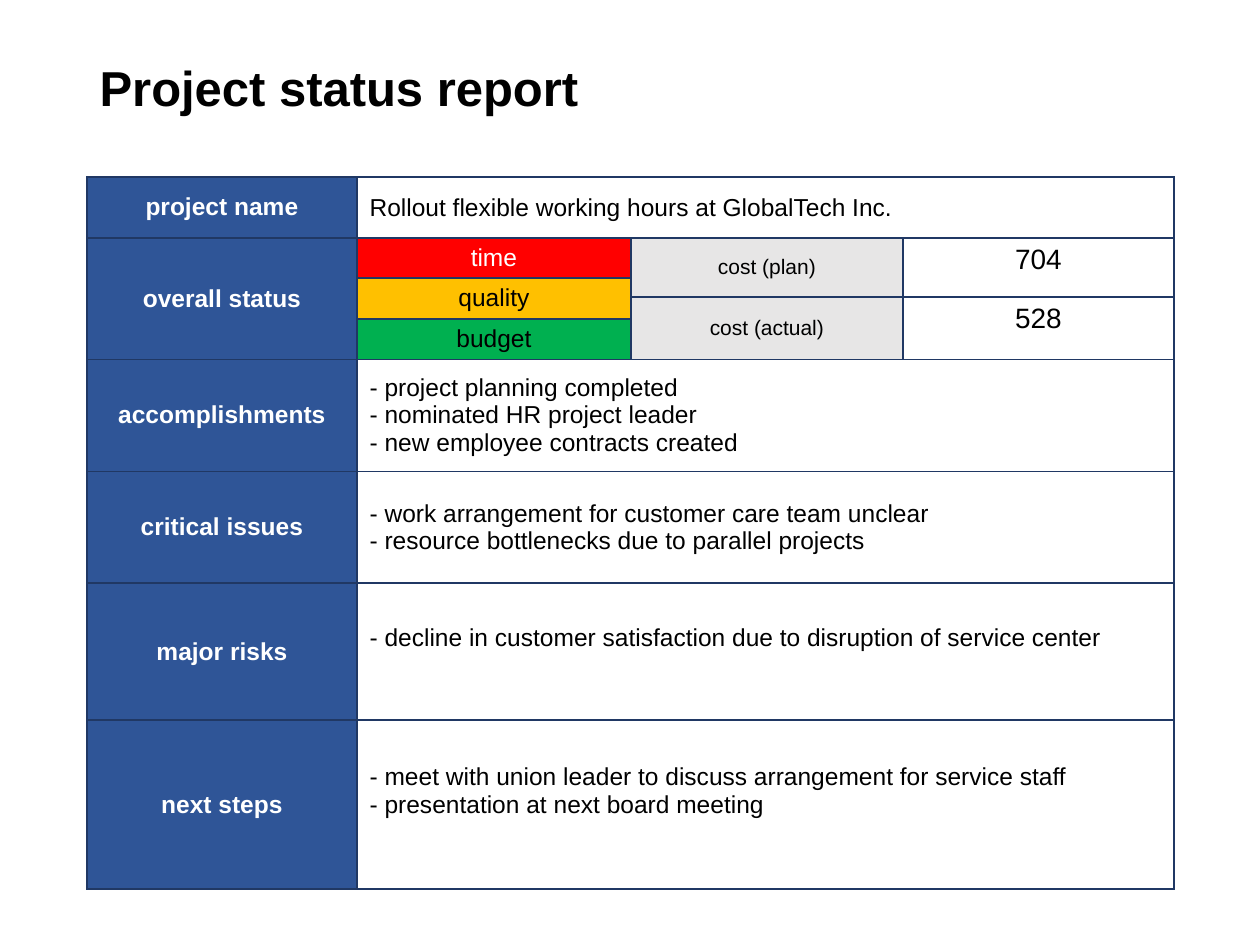
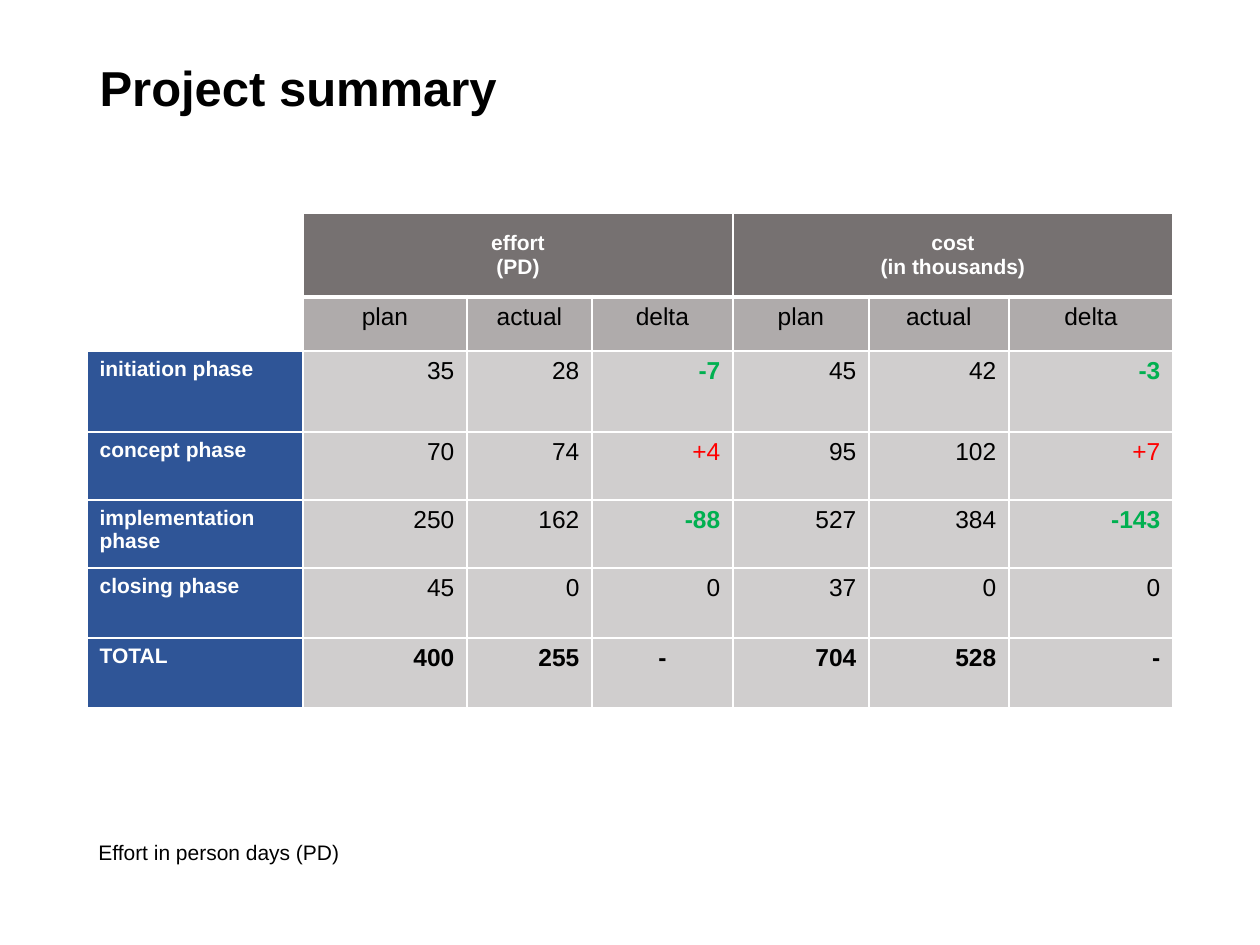
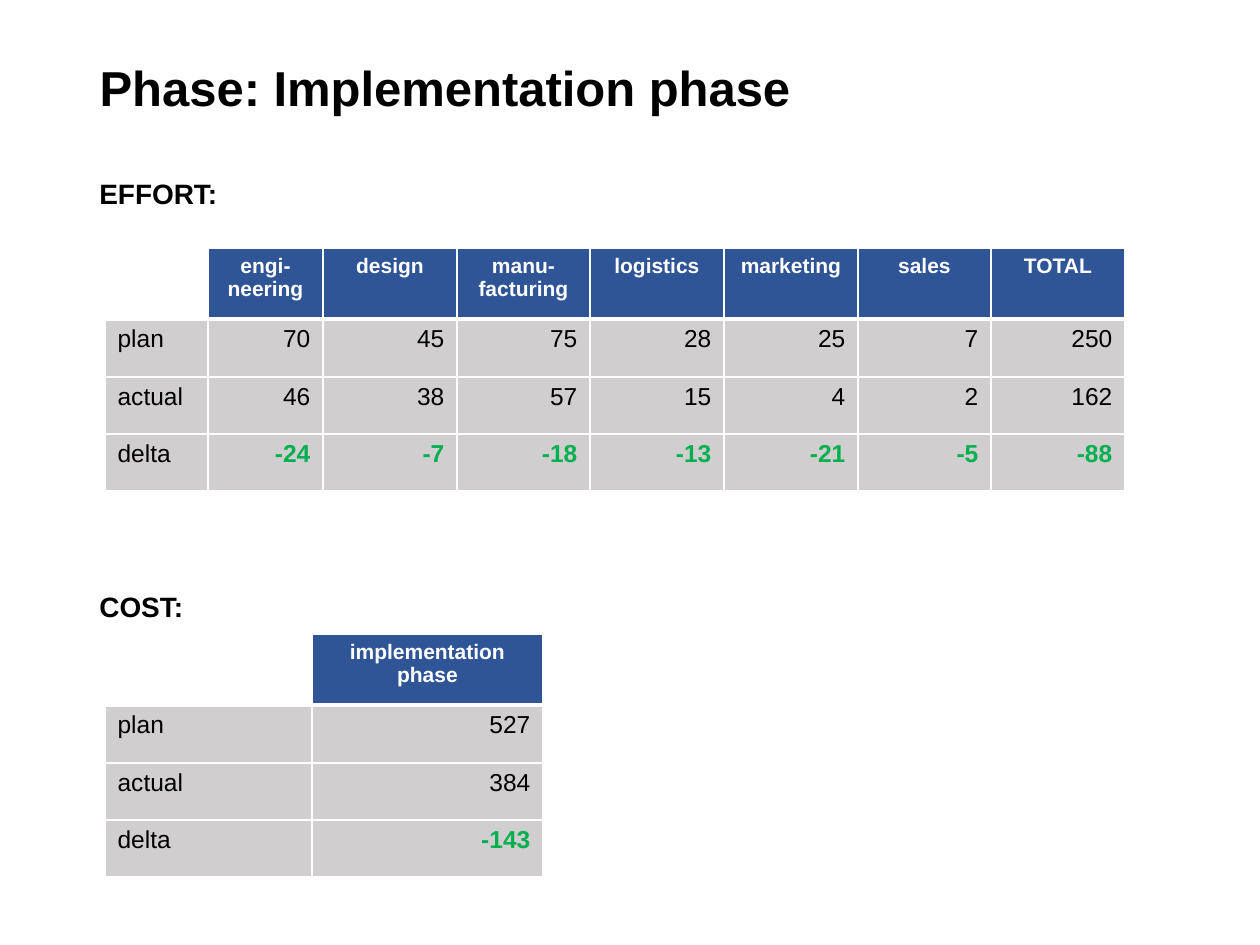
from lxml.etree import SubElement
from pptx import Presentation
from pptx.dml.color import RGBColor
from pptx.enum.text import MSO_ANCHOR, MSO_AUTO_SIZE, PP_ALIGN
from pptx.oxml.ns import qn
from pptx.util import Emu, Pt

COLORS = {
    "black": "000000", "white": "FFFFFF", "blue": "2F5597", "navy": "203864",
    "red": "FF0000", "amber": "FFC000", "green": "00B050", "pale": "E7E6E6",
    "dark": "767171", "mid": "AFABAB", "light": "D0CECE",
}
FONT = "Arial"
LEFT, CENTER, RIGHT = PP_ALIGN.LEFT, PP_ALIGN.CENTER, PP_ALIGN.RIGHT
TOP, MIDDLE = MSO_ANCHOR.TOP, MSO_ANCHOR.MIDDLE
TITLE_BOX = (87, 50, 1086, 81)
DETAIL_ROWS = [71, 58, 57, 57]


def px(n):
    """Turn pixels at 126 to the inch into EMU."""
    return Emu(round(n * 914400 / 126))


def rgb(name):
    """Return the named colour."""
    return RGBColor.from_string(COLORS[name])


def write(tf, text, size=14, color="black", bold=False, align=LEFT, spacing=None):
    """Fill a text frame, one paragraph a line, in one format."""
    tf.text = text
    for p in tf.paragraphs:
        p.alignment = align
        if spacing:
            p.line_spacing = spacing
        for r in p.runs:
            r.font.name, r.font.size, r.font.bold = FONT, Pt(size), bold
            r.font.color.rgb = rgb(color)


def add_slide(prs, title):
    """Add a title-only slide with the shared title style."""
    s = prs.slides.add_slide(prs.slide_layouts[5])
    sp = s.shapes.title
    sp.left, sp.top, sp.width, sp.height = map(px, TITLE_BOX)
    tf = sp.text_frame
    tf.auto_size, tf.vertical_anchor = MSO_AUTO_SIZE.NONE, MIDDLE
    write(tf, title, size=28, bold=True, spacing=0.9)
    return s


def add_text(s, box, text, **fmt):
    """Add a wrapping text box."""
    tf = s.shapes.add_textbox(*map(px, box)).text_frame
    tf.word_wrap = True
    write(tf, text, **fmt)


def add_borders(cell, color, top=1, bottom=1):
    """Draw the four borders of a cell, widths in points."""
    tc_pr = cell._tc.get_or_add_tcPr()
    for side, width in zip("LRTB", (1, 1, top, bottom)):
        ln = SubElement(tc_pr, qn(f"a:ln{side}"), w=str(Pt(width)))
        fill = SubElement(ln, qn("a:solidFill"))
        SubElement(fill, qn("a:srgbClr"), val=COLORS[color])


def add_grid(s, x, y, cols, rows, border, header_rule=1):
    """Add an unfilled, bordered table; header_rule is the line under its first row."""
    box = map(px, (x, y, sum(cols), sum(rows)))
    table = s.shapes.add_table(len(rows), len(cols), *box).table
    table.first_row = table.horz_banding = False
    for col, width in zip(table.columns, cols):
        col.width = px(width)
    for i, (row, height) in enumerate(zip(table.rows, rows)):
        row.height = px(height)
        for cell in row.cells:
            add_borders(cell, border, header_rule if i == 1 else 1,
                        header_rule if i == 0 else 1)
            cell.fill.background()
    return table


def set_cell(table, row, col, text, fill=None, span=(1, 1), anchor=TOP, **fmt):
    """Write one cell, merged over span rows and columns."""
    cell = table.cell(row, col)
    if span != (1, 1):
        cell.merge(table.cell(row + span[0] - 1, col + span[1] - 1))
    if fill:
        cell.fill.solid()
        cell.fill.fore_color.rgb = rgb(fill)
    cell.vertical_anchor = anchor
    write(cell.text_frame, text, **fmt)
    return cell


def set_value(table, row, col, text, bold=False, align=RIGHT):
    """Write a figure: savings in bold green, overruns in red."""
    color = "black"
    if text.startswith("-") and len(text) > 1:
        color, bold = "green", True
    elif text.startswith("+"):
        color = "red"
    set_cell(table, row, col, text, "light", color=color, bold=bold, align=align)


def status_table(s, x, y):
    """Build the status report table."""
    table = add_grid(s, x, y, [270, 274, 272, 271],
                     [61, 40, 19, 22, 40, 112, 112, 137, 169], "navy")
    entries = [
        (0, 1, "project name", "Rollout flexible working hours at GlobalTech Inc.", 0),
        (1, 4, "overall status", None, 0),
        (5, 1, "accomplishments", "- project planning completed\n"
         "- nominated HR project leader\n- new employee contracts created", 0),
        (6, 1, "critical issues", "- work arrangement for customer care team unclear\n"
         "- resource bottlenecks due to parallel projects", 0),
        (7, 1, "major risks", "- decline in customer satisfaction due to "
         "disruption of service center", 28),
        (8, 1, "next steps", "- meet with union leader to discuss arrangement for "
         "service staff\n- presentation at next board meeting", 28),
    ]
    for row, height, label, text, lift in entries:
        set_cell(table, row, 0, label, "blue", (height, 1), MIDDLE,
                 color="white", bold=True, align=CENTER)
        if text:
            cell = set_cell(table, row, 1, text, span=(1, 3), anchor=MIDDLE)
            cell.margin_bottom = px(6 + lift)
    lights = [(1, 1, "time", "red", "white"), (2, 2, "quality", "amber", "black"),
              (4, 1, "budget", "green", "black")]
    for row, height, label, fill, color in lights:
        set_cell(table, row, 1, label, fill, (height, 1), color=color, align=CENTER)
    for row, label, cost in [(1, "cost (plan)", "704"), (3, "cost (actual)", "528")]:
        set_cell(table, row, 2, label, "pale", (2, 1), MIDDLE, size=12, align=CENTER)
        set_cell(table, row, 3, cost, span=(2, 1), size=16, align=CENTER)


def summary_table(s, x, y):
    """Build the effort and cost table by phase."""
    phases = [
        ("initiation phase", "35 28 -7 45 42 -3"),
        ("concept phase", "70 74 +4 95 102 +7"),
        ("implementation phase", "250 162 -88 527 384 -143"),
        ("closing phase", "45 0 0 37 0 0"),
        ("TOTAL", "400 255 - 704 528 -"),
    ]
    table = add_grid(s, x, y, [216, 164, 125, 141, 136, 140, 164],
                     [84, 54, 81, 68, 68, 70, 70], "white", header_rule=3)
    for col, label in [(1, "effort\n(PD)"), (4, "cost\n(in thousands)")]:
        set_cell(table, 0, col, label, "dark", (1, 3), MIDDLE,
                 size=12, color="white", bold=True, align=CENTER)
    for col, label in enumerate(["plan", "actual", "delta"] * 2, 1):
        set_cell(table, 1, col, label, "mid", align=CENTER)
    for row, (phase, values) in enumerate(phases, 2):
        set_cell(table, row, 0, phase, "blue", size=12, color="white", bold=True)
        for col, value in enumerate(values.split(), 1):
            set_value(table, row, col, value, bold=phase == "TOTAL",
                      align=CENTER if value == "-" and col == 3 else RIGHT)


def detail_table(s, x, y, cols, heads, values):
    """Build a plan, actual and delta table under blue headings."""
    table = add_grid(s, x, y, cols, DETAIL_ROWS, "white", header_rule=3)
    for col, head in enumerate(heads, 1):
        set_cell(table, 0, col, head, "blue", size=12, color="white",
                 bold=True, align=CENTER)
    for row, (label, line) in enumerate(zip(["plan", "actual", "delta"], values), 1):
        set_cell(table, row, 0, label, "light")
        for col, value in enumerate(line.split(), 1):
            set_value(table, row, col, value)


def status_slide(prs):
    """Build the status report slide."""
    status_table(add_slide(prs, "Project status report"), 87, 177)


def summary_slide(prs):
    """Build the project summary slide."""
    s = add_slide(prs, "Project summary")
    summary_table(s, 87, 213)
    add_text(s, (86, 833, 544, 38), "Effort in person days (PD)", size=12)


def phase_slide(prs):
    """Build the implementation phase slide."""
    s = add_slide(prs, "Phase: Implementation phase")
    for y, label in [(170, "EFFORT:"), (583, "COST:")]:
        add_text(s, (87, y, 311, 47), label, size=16, bold=True)
    detail_table(s, 105, 248, [103, 115] + [134, 133, 134] * 2,
                 ["engi-neering", "design", "manu-facturing", "logistics",
                  "marketing", "sales", "TOTAL"],
                 ["70 45 75 28 25 7 250", "46 38 57 15 4 2 162",
                  "-24 -7 -18 -13 -21 -5 -88"])
    detail_table(s, 105, 634, [207, 231], ["implementation phase"],
                 ["527", "384", "-143"])


def main():
    """Build and save the presentation."""
    prs = Presentation()
    prs.slide_width, prs.slide_height = px(1260), px(945)
    status_slide(prs)
    summary_slide(prs)
    phase_slide(prs)
    prs.save("out.pptx")


if __name__ == "__main__":
    main()
